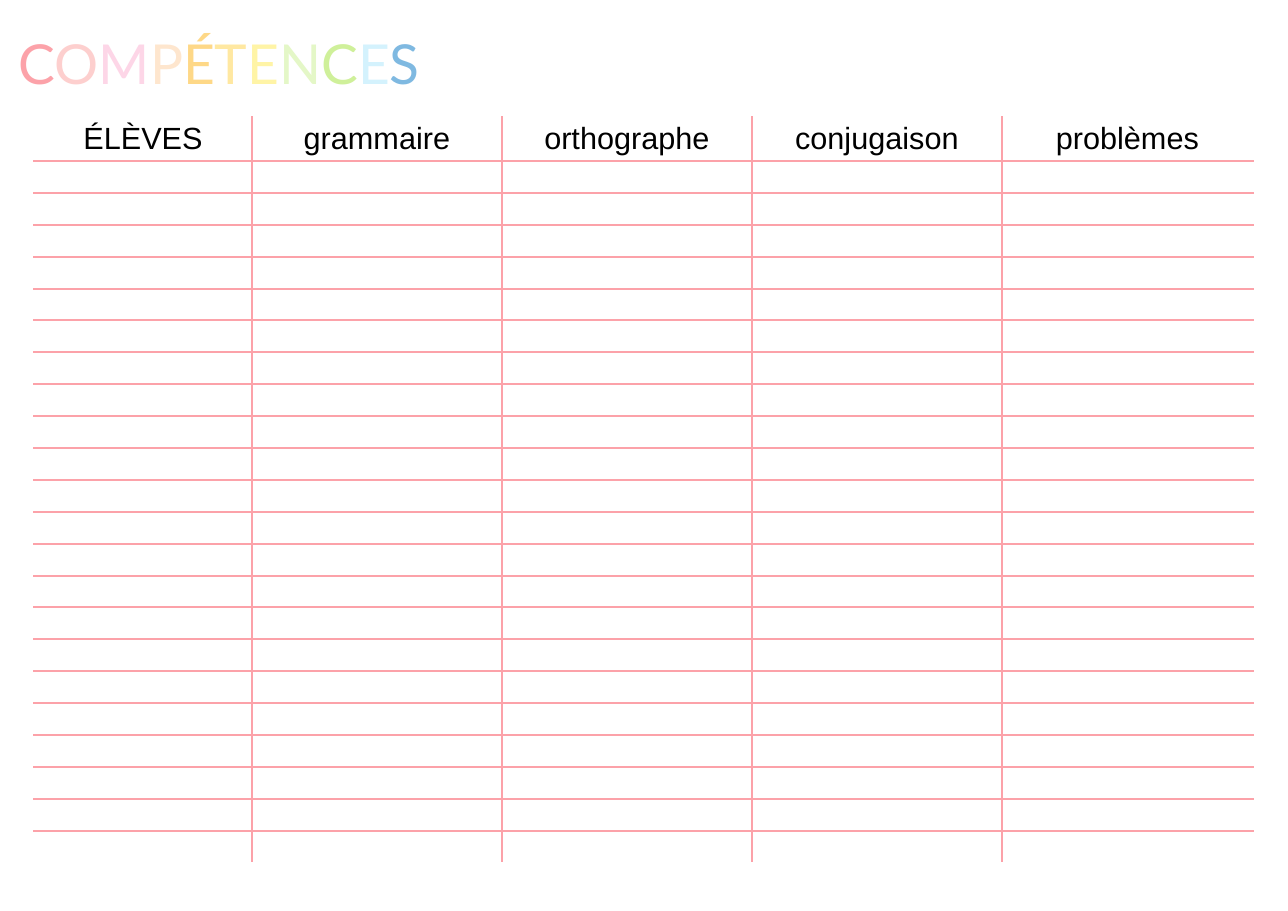
from lxml.etree import SubElement as sub
from pptx import Presentation
from pptx.dml.color import RGBColor
from pptx.enum.text import MSO_ANCHOR as ANCHOR, MSO_AUTO_SIZE as FIT, PP_ALIGN as ALIGN
from pptx.oxml.ns import qn
from pptx.util import Pt

SCALE = 8298  # EMU in one px
BLACK = RGBColor(0, 0, 0)
WHITE = RGBColor(255, 255, 255)
PINK = RGBColor(0xFC, 0xA2, 0xA9)
TINTS = [PINK, RGBColor(0xFD, 0xCF, 0xCE), RGBColor(0xFD, 0xD6, 0xE7),
         RGBColor(0xFE, 0xE6, 0xCE), RGBColor(0xFE, 0xD8, 0x87),
         RGBColor(0xFF, 0xE8, 0xA1), RGBColor(0xFF, 0xF4, 0xA6),
         RGBColor(0xE4, 0xF7, 0xC7), RGBColor(0xCF, 0xF0, 0x9A),
         RGBColor(0xD4, 0xF2, 0xFD), RGBColor(0x7F, 0xB9, 0xE1)]
HEADS = ["ÉLÈVES", "grammaire", "orthographe", "conjugaison", "problèmes"]
WIDTHS = [218, 250, 250, 250, 251]
ROWS = 22  # blank rows, one for each pupil


def write(para, text, font="Arial", size=20, color=BLACK, align=ALIGN.LEFT):
    para.alignment = align
    run = para.add_run()
    run.text = text
    run.font.name = font
    run.font.size = Pt(size)
    run.font.color.rgb = color


def edge(cell, side):
    line = sub(cell._tc.get_or_add_tcPr(), qn("a:ln" + side), w=str(Pt(1.5)))
    fill = sub(line, qn("a:solidFill"))
    sub(fill, qn("a:srgbClr"), val=str(PINK))


deck = Presentation()
deck.slide_width = 1288 * SCALE
deck.slide_height = 911 * SCALE
slide = deck.slides.add_slide(deck.slide_layouts[5])

# Title, one tint per letter
title = slide.shapes.title
title.left, title.top = 7 * SCALE, 24 * SCALE
title.width, title.height = 523 * SCALE, 78 * SCALE
frame = title.text_frame
frame.word_wrap = True
frame.auto_size = FIT.SHAPE_TO_FIT_TEXT
frame.vertical_anchor = ANCHOR.TOP
for char, tint in zip("COMPÉTENCES", TINTS):
    write(frame.paragraphs[0], char, font="Lato", size=36, color=tint)

# Table grid
grid = slide.shapes.add_table(ROWS + 1, len(HEADS), 34 * SCALE, 117 * SCALE,
                              sum(WIDTHS) * SCALE, 746 * SCALE).table
grid.first_row = grid.horz_banding = False
for col, width in zip(grid.columns, WIDTHS):
    col.width = width * SCALE
for row in grid.rows:
    row.height = 702 * SCALE // ROWS
grid.rows[0].height = 44 * SCALE

# Cells: inner lines only, header text in the first row
for r, row in enumerate(grid.rows):
    for c, cell in enumerate(row.cells):
        sides = {"L": c > 0, "R": c < len(HEADS) - 1, "T": r > 0, "B": r < ROWS}
        for side, inner in sides.items():
            if inner:
                edge(cell, side)
        cell.fill.solid()
        cell.fill.fore_color.rgb = WHITE
        cell.margin_left = cell.margin_right = 3 * SCALE
        cell.margin_top = cell.margin_bottom = 3 * SCALE
        cell.vertical_anchor = ANCHOR.MIDDLE
        para = cell.text_frame.paragraphs[0]
        if r == 0:
            write(para, HEADS[c], align=ALIGN.CENTER)
        else:
            sub(para._p, qn("a:endParaRPr"), sz="1000")

deck.save("out.pptx")
